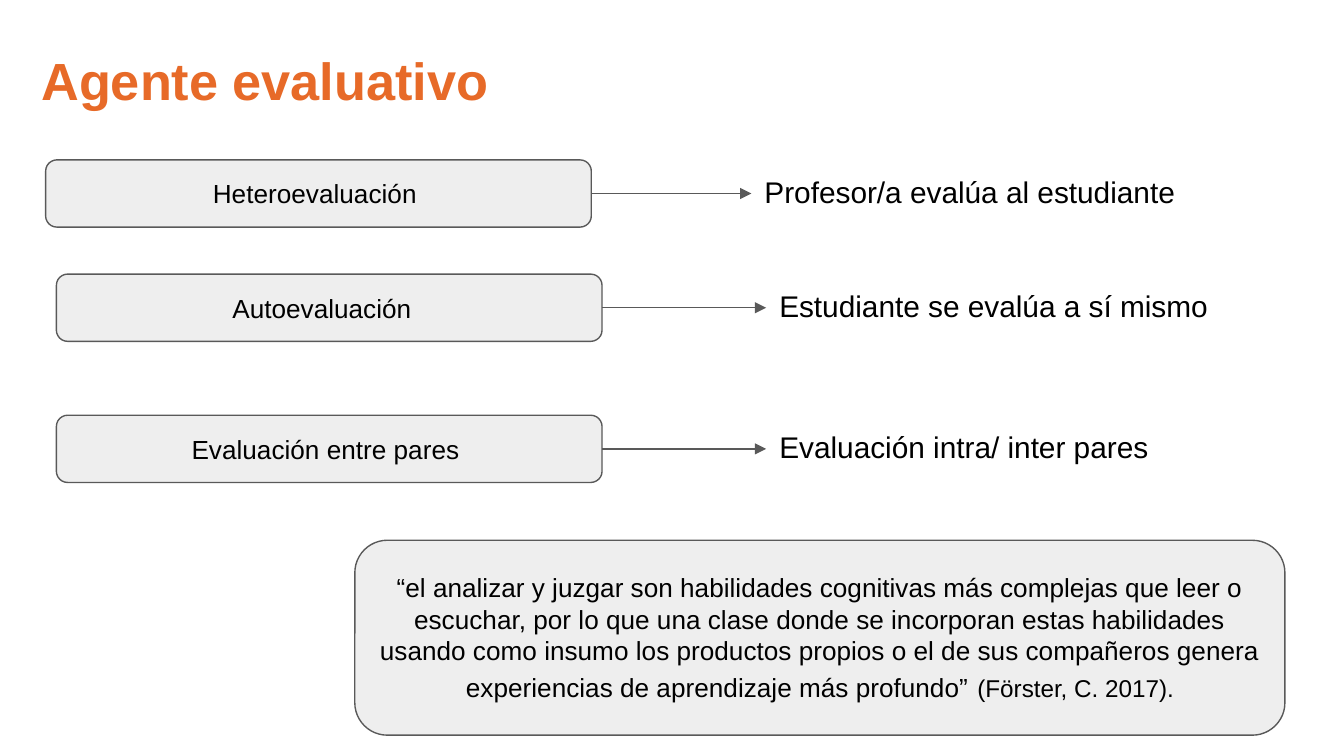
import pptx
import pptx.util
import pptx.dml.color
import pptx.enum.shapes
import pptx.enum.text
import pptx.oxml.ns
from dataclasses import dataclass
from lxml import etree

Inches = pptx.util.Inches
Pt = pptx.util.Pt
RGB = pptx.dml.color.RGBColor.from_string
Align = pptx.enum.text.PP_ALIGN
Anchor = pptx.enum.text.MSO_ANCHOR
qn = pptx.oxml.ns.qn


@dataclass(frozen=True)
class Theme:
    font: str = "Arial"
    accent: str = "E76A28"
    ink: str = "000000"
    fill: str = "EEEEEE"
    line: str = "595959"
    title: int = 28
    label: int = 14
    note: int = 16
    gap: int = 17
    cite: int = 13
    stroke: float = 0.75


theme = Theme()
deck = pptx.Presentation()
deck.slide_width = Inches(10)
deck.slide_height = Inches(10 * 9 / 16)
slide = deck.slides.add_slide(deck.slide_layouts[6])


def write(shape, text, size, color=theme.ink, bold=False, align=Align.LEFT, anchor=Anchor.TOP):
    frame = shape.text_frame
    frame.text = text
    frame.word_wrap = True
    frame.vertical_anchor = anchor
    frame.margin_left = frame.margin_right = Inches(0.1)
    frame.margin_top = frame.margin_bottom = Inches(0.1)
    para = frame.paragraphs[0]
    para.alignment = align
    font = para.runs[0].font
    font.name, font.size, font.bold = theme.font, Pt(size), bold
    font.color.rgb = RGB(color)
    return para


def add_box(left, top, width, height, text):
    """Add a grey rounded box with centred text and return its paragraph."""
    box = slide.shapes.add_shape(
        pptx.enum.shapes.MSO_SHAPE.ROUNDED_RECTANGLE,
        Inches(left), Inches(top), Inches(width), Inches(height))
    box.shadow.inherit = False
    box.fill.solid()
    box.fill.fore_color.rgb = RGB(theme.fill)
    box.line.color.rgb = RGB(theme.line)
    box.line.width = Pt(theme.stroke)
    return write(box, text, theme.label, align=Align.CENTER, anchor=Anchor.MIDDLE)


title = slide.shapes.add_textbox(Inches(0.21), Inches(0.26), Inches(6.12), Inches(0.67))
write(title, "Agente evaluativo", theme.title, theme.accent, bold=True)

# Each row: box left, top, note left, note width, label, note
rows = [
    (0.34, 1.19, 5.59, 3.5, "Heteroevaluación ", "Profesor/a evalúa al estudiante"),
    (0.42, 2.04, 5.7, 3.76, "Autoevaluación  ", "Estudiante se evalúa a sí mismo"),
    (0.42, 3.09, 5.7, 3.38, "Evaluación entre pares ", "Evaluación intra/ inter pares"),
]
wide, high = 4.06, 0.5
for left, top, start, span, label, note in rows:
    add_box(left, top, wide, high, label)
    area = slide.shapes.add_textbox(Inches(start), Inches(top), Inches(span), Inches(high))
    write(area, note, theme.note)

    mid = Inches(top + high / 2)
    arrow = slide.shapes.add_connector(
        pptx.enum.shapes.MSO_CONNECTOR.STRAIGHT,
        Inches(left + wide), mid, Inches(start), mid)
    arrow.line.color.rgb = RGB(theme.line)
    arrow.line.width = Pt(theme.stroke)
    props = arrow._element.spPr
    etree.SubElement(props.find(qn("a:ln")), qn("a:tailEnd")).set("type", "triangle")
    etree.SubElement(props, qn("a:effectLst"))

quote = add_box(
    2.64, 4.02, 6.92, 1.45,
    "“el analizar y juzgar son habilidades cognitivas más complejas que leer o "
    "escuchar, por lo que una clase donde se incorporan estas habilidades "
    "usando como insumo los productos propios o el de sus compañeros genera "
    "experiencias de aprendizaje más profundo”")
for text, size in [(" ", theme.gap), ("(Förster, C. 2017).", theme.cite)]:
    run = quote.add_run()
    run.text = text
    run.font.name, run.font.size = theme.font, Pt(size)
    run.font.color.rgb = RGB(theme.ink)

deck.save("out.pptx")
